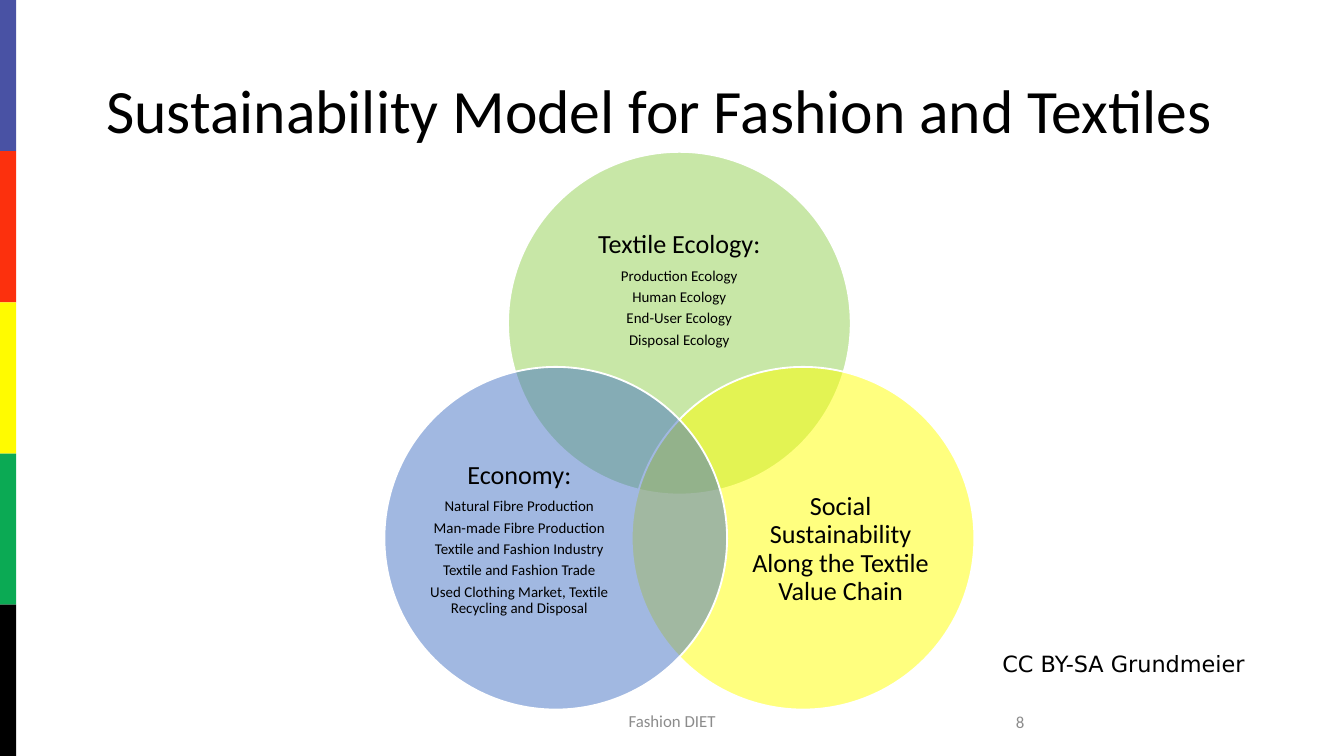
"""Build the slide on the sustainability model for fashion and textiles."""
from lxml import etree
from pptx import Presentation
from pptx import util as u
from pptx.dml.color import RGBColor
from pptx.enum import shapes, text
from pptx.oxml.ns import qn

COLOURS = {
    "blue": "4952A4", "red": "FC300D", "yellow": "FFFB00", "green": "0BAA54",
    "black": "000000", "white": "FFFFFF", "grey": "8C8C8C",
    "ecology": "92D050", "social": "FFFF00", "economy": "4472C4",
}
ALIGN = text.PP_ALIGN


def write(box, lines, sizes, align=ALIGN.LEFT, colour="black", font="Calibri",
          anchor=text.MSO_ANCHOR.MIDDLE, insets=None, spacing=1, after=0):
    """Fill a box with one paragraph for each line."""
    frame = box.text_frame
    frame.word_wrap = True
    frame.auto_size = text.MSO_AUTO_SIZE.NONE
    frame.vertical_anchor = anchor
    if insets:
        (frame.margin_left, frame.margin_top,
         frame.margin_right, frame.margin_bottom) = map(u.Inches, insets)
    for index, (line, size) in enumerate(zip(lines, sizes)):
        para = frame.paragraphs[0] if index == 0 else frame.add_paragraph()
        para.alignment = align
        para.line_spacing = spacing
        para.space_before = u.Pt(0)
        para.space_after = u.Pt(size * after)
        span = para.add_run()
        span.text = line
        span.font.name = font
        span.font.size = u.Pt(size)
        span.font.color.rgb = RGBColor.from_string(COLOURS[colour])


def add_solid(kind, left, top, width, height, colour):
    """Add a filled shape without outline or shadow."""
    shape = page.shapes.add_shape(kind, *map(u.Inches, (left, top, width, height)))
    shape.shadow.inherit = False
    shape.fill.solid()
    shape.fill.fore_color.rgb = RGBColor.from_string(COLOURS[colour])
    shape.line.fill.background()
    return shape


deck = Presentation()
deck.slide_width, deck.slide_height = u.Inches(10), u.Inches(5.625)
page = deck.slides.add_slide(deck.slide_layouts[5])

stripe_height = 5.625 / 5
for index, colour in enumerate(("blue", "red", "yellow", "green", "black")):
    add_solid(shapes.MSO_SHAPE.RECTANGLE, 0, index * stripe_height, 0.12, stripe_height, colour)

title = page.shapes.title
title.left, title.top, title.width, title.height = map(u.Inches, (0.69, 0.3, 8.62, 1.09))
write(title, ["Sustainability Model for Fashion and Textiles"], [33], spacing=0.9)

labels = [
    ("Fashion DIET", (3.31, 5.21, 3.38, 0.3),
     dict(sizes=[9], align=ALIGN.CENTER, colour="grey")),
    ("8", (5.47, 5.22, 2.25, 0.3), dict(sizes=[9], align=ALIGN.RIGHT, colour="grey")),
    ("CC BY-SA Grundmeier", (7.36, 4.79, 2.36, 0.3),
     dict(sizes=[12], font="DejaVu Sans", anchor=text.MSO_ANCHOR.TOP)),
]
for label, place, style in labels:
    write(page.shapes.add_textbox(*map(u.Inches, place)), [label], **style)

diameter = 2.55
circles = [
    ("ecology", (3.78, 1.13), (4.12, 1.58, 1.87, 1.15), 0,
     ["Textile Ecology:", "Production Ecology", "Human Ecology", "End-User Ecology",
      "Disposal Ecology"]),
    ("social", (4.7, 2.73), (5.49, 3.39, 1.53, 1.4), 0,
     ["Social Sustainability Along the Textile Value Chain"]),
    ("economy", (2.86, 2.73), (3.1, 3.39, 1.53, 1.4), 0.16,
     ["Economy:", "Natural Fibre Production", "Man-made Fibre Production",
      "Textile and Fashion Industry", "Textile and Fashion Trade",
      "Used Clothing Market, Textile Recycling and Disposal"]),
]
for colour, corner, place, bottom, lines in circles:
    circle = add_solid(shapes.MSO_SHAPE.OVAL, *corner, diameter, diameter, colour)
    circle.line.color.rgb = RGBColor.from_string(COLOURS["white"])
    circle.line.width = u.Pt(1)
    tint = circle.fill._xPr.find(qn("a:solidFill"))[0]
    etree.SubElement(tint, qn("a:alpha"), val="50000")
    box = page.shapes.add_textbox(*map(u.Inches, place))
    write(box, lines, [14] + [8] * (len(lines) - 1), align=ALIGN.CENTER,
          insets=(0, 0, 0, bottom), spacing=0.9, after=0.35)

deck.save("out.pptx")
